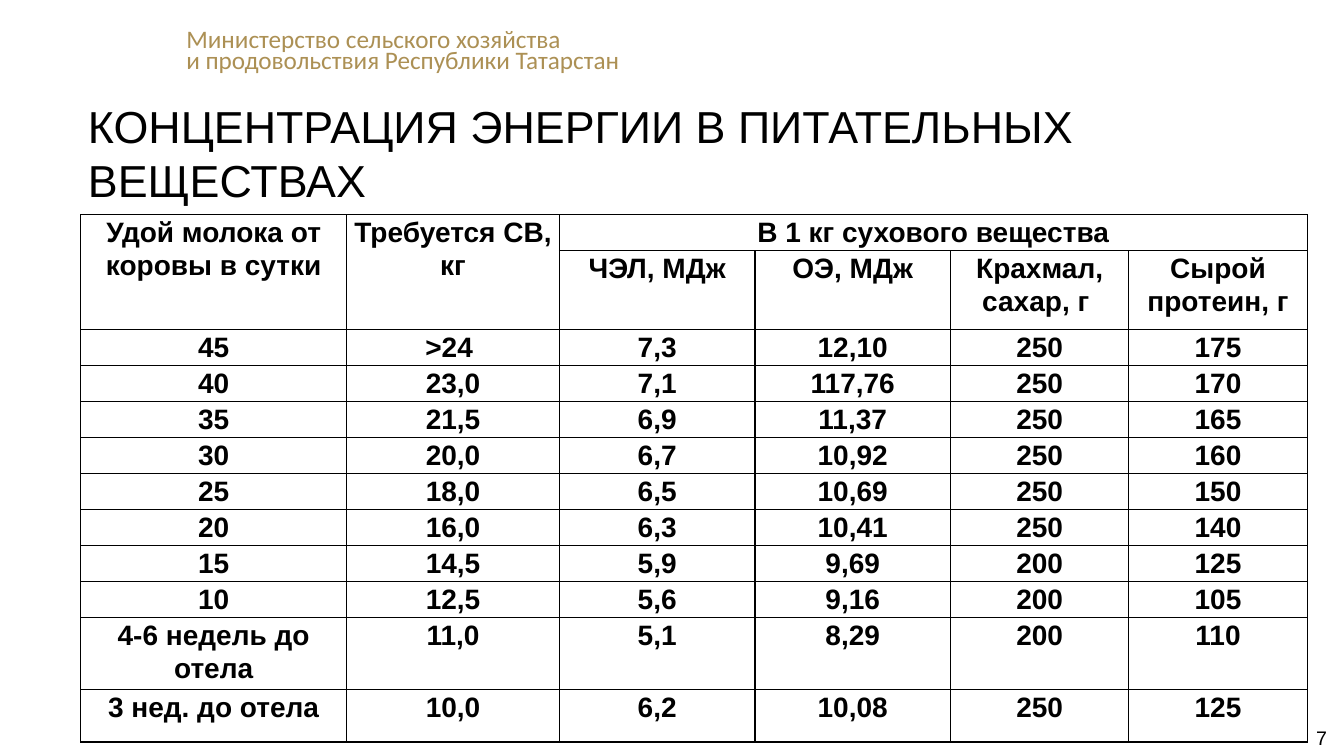
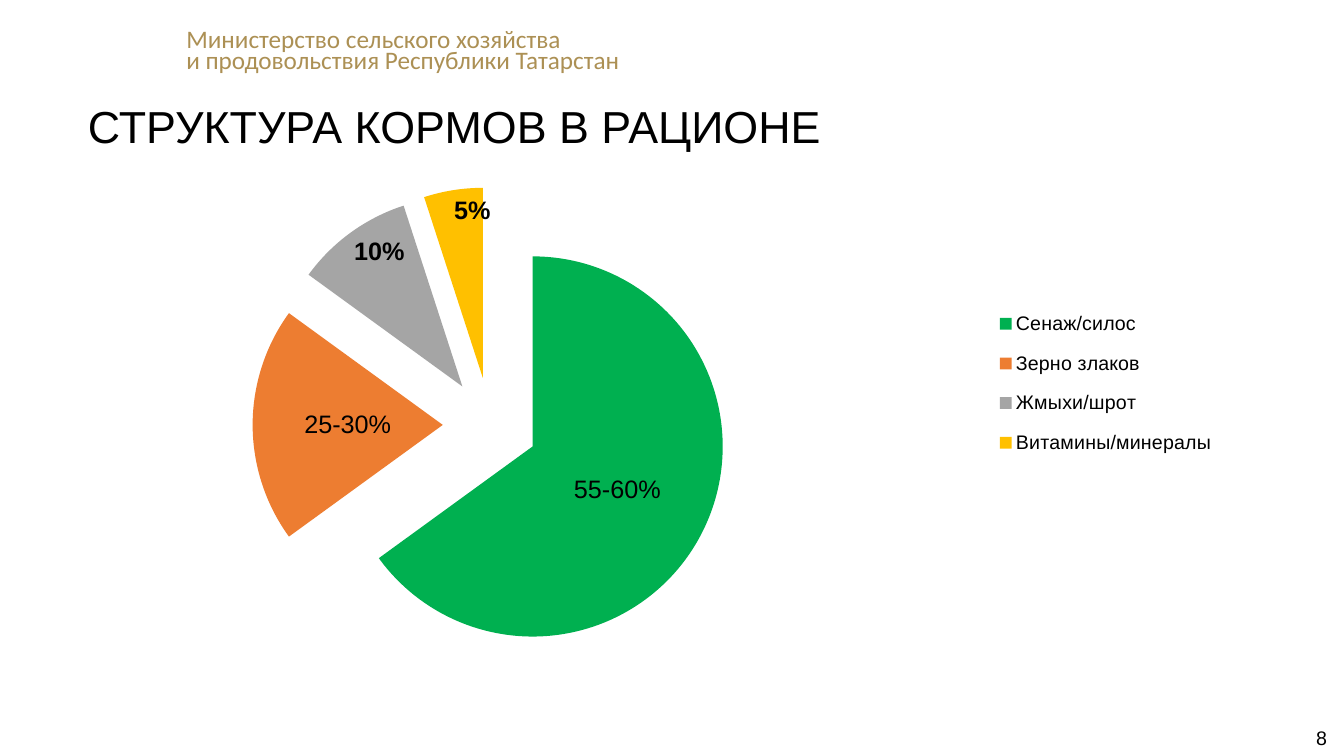
"""Build two slides on cow feed: an energy concentration table and a ration pie chart."""
from dataclasses import dataclass

from pptx import Presentation
from pptx.chart.data import CategoryChartData
from pptx.dml.color import RGBColor
from pptx.enum.chart import XL_CHART_TYPE, XL_LABEL_POSITION, XL_LEGEND_POSITION
from pptx.enum.text import MSO_ANCHOR, MSO_AUTO_SIZE, PP_ALIGN
from pptx.oxml import parse_xml
from pptx.oxml.ns import nsdecls
from pptx.util import Pt

PIE = XL_CHART_TYPE.PIE
INSIDE_END, CENTER_LABEL = XL_LABEL_POSITION.INSIDE_END, XL_LABEL_POSITION.CENTER
LEGEND_RIGHT = XL_LEGEND_POSITION.RIGHT
TOP = MSO_ANCHOR.TOP
GROW, FIXED = MSO_AUTO_SIZE.SHAPE_TO_FIT_TEXT, MSO_AUTO_SIZE.NONE
LEFT, CENTER = PP_ALIGN.LEFT, PP_ALIGN.CENTER


@dataclass(frozen=True)
class Theme:
    """Colours, fonts and type sizes of the deck."""
    ink: str = "000000"
    gold: str = "AC9054"
    slices: tuple = ("00B050", "ED7D31", "A5A5A5", "FFC000")
    text_font: str = "Arial"
    header_font: str = "Calibri"
    title_size: int = 32
    header_size: int = 18
    table_size: int = 20
    label_size: int = 18
    small_size: int = 14


THEME = Theme()
HEADER = ("Министерство сельского хозяйства", "и продовольствия Республики Татарстан")
COLUMN_WIDTHS = (190.1, 151.9, 139.7, 139.7, 127.4, 127.4)
ROW_HEIGHTS = (25.7, 56.4, *[25.7] * 8, 51.4, 37.4)
MERGES = ((0, 0, 1, 0), (0, 1, 1, 1), (0, 2, 0, 5))
FEED_ROWS = (
    ("Удой молока от коровы в сутки", "Требуется СВ, кг", "В 1 кг сухового вещества", "", "", ""),
    ("", "", "ЧЭЛ, МДж", "ОЭ, МДж", "Крахмал, сахар, г ", "Сырой протеин, г"),
    ("45", ">24 ", "7,3", "12,10", "250", "175"),
    ("40", "23,0", "7,1", "117,76", "250", "170"),
    ("35", "21,5", "6,9", "11,37", "250", "165"),
    ("30", "20,0", "6,7", "10,92", "250", "160"),
    ("25", "18,0", "6,5", "10,69", "250", "150"),
    ("20", "16,0", "6,3", "10,41", "250", "140"),
    ("15", "14,5", "5,9", "9,69", "200", "125"),
    ("10", "12,5", "5,6", "9,16", "200", "105"),
    ("4-6 недель до отела", "11,0", "5,1", "8,29", "200", "110"),
    ("3 нед. до отела", "10,0", "6,2", "10,08", "250", "125"),
)
RATION = {"Сенаж/силос": 65, "Зерно злаков": 20, "Жмыхи/шрот": 10, "Витамины/минералы": 5}
RANGE_LABELS = ("55-60%", "25-30%")


def apply(target, formats):
    """Set each attribute named in formats on target."""
    for name, value in formats.items():
        setattr(target, name, value)


def style_font(font, size, color=THEME.ink, name=THEME.text_font, bold=False):
    """Format a font."""
    apply(font, {"size": Pt(size), "name": name, "bold": bold})
    font.color.rgb = RGBColor.from_string(color)


def place(shape, left, top, width, height):
    """Position a shape, in points."""
    apply(shape, {"left": Pt(left), "top": Pt(top), "width": Pt(width), "height": Pt(height)})


def add_header(page, layout):
    """Put the ministry name on the layout, where every page shows it."""
    for holder in list(layout.placeholders)[1:]:
        holder.element.getparent().remove(holder.element)
    box = page.shapes.add_textbox(Pt(126), Pt(18.7), Pt(327.6), Pt(38.9))
    frame = box.text_frame
    apply(frame, {"word_wrap": False, "auto_size": GROW, "text": "\n".join(HEADER)})
    for para in frame.paragraphs:
        para.line_spacing = 0.7
        style_font(para.runs[0].font, THEME.header_size, THEME.gold, THEME.header_font)
    layout.shapes.element.append(box.element)


def add_title(page, text, height):
    """Fill and format the title placeholder."""
    title = page.shapes.title
    place(title, 41.8, 67, 918, height)
    frame = title.text_frame
    apply(frame, {"text": text, "word_wrap": True, "auto_size": GROW,
                  "vertical_anchor": TOP, "margin_left": Pt(21)})
    para = frame.paragraphs[0]
    para.alignment = LEFT
    style_font(para.runs[0].font, THEME.title_size)


def add_page_number(page, number):
    """Write the page number in the bottom right corner."""
    box = page.shapes.add_textbox(Pt(934.6), Pt(518.4), Pt(18.7), Pt(16.6))
    frame = box.text_frame
    apply(frame, {"text": str(number), "word_wrap": False, "auto_size": FIXED,
                  "margin_left": 0, "margin_right": 0, "margin_top": 0, "margin_bottom": 0})
    para = frame.paragraphs[0]
    para.alignment = CENTER
    style_font(para.runs[0].font, THEME.small_size)


def add_borders(cell):
    """Draw a thin line on all four sides of a cell."""
    properties = cell._tc.get_or_add_tcPr()
    for side in "LRTB":
        properties.append(parse_xml(
            f'<a:ln{side} {nsdecls("a")} w="{Pt(1)}"><a:solidFill>'
            f'<a:srgbClr val="{THEME.ink}"/></a:solidFill></a:ln{side}>'))


def fill_cell(cell, text):
    """Write and format one table cell."""
    add_borders(cell)
    cell.fill.background()
    apply(cell, {"text": text, "vertical_anchor": TOP, "margin_left": Pt(5.4),
                 "margin_right": Pt(5.4), "margin_top": 0, "margin_bottom": 0})
    para = cell.text_frame.paragraphs[0]
    apply(para, {"alignment": CENTER, "line_spacing": 1.07})
    style_font(para.font, THEME.table_size, bold=True)
    for span in para.runs:
        style_font(span.font, THEME.table_size, bold=True)


def add_feed_table(page):
    """Add the table of energy and nutrients by milk yield."""
    table = page.shapes.add_table(
        len(ROW_HEIGHTS), len(COLUMN_WIDTHS), Pt(57.6), Pt(153.4),
        Pt(sum(COLUMN_WIDTHS)), Pt(sum(ROW_HEIGHTS))).table
    apply(table, {"first_row": False, "horz_banding": False})
    for column, width in zip(table.columns, COLUMN_WIDTHS):
        column.width = Pt(width)
    for row, height, texts in zip(table.rows, ROW_HEIGHTS, FEED_ROWS):
        row.height = Pt(height)
        for cell, text in zip(row.cells, texts):
            fill_cell(cell, text)
    for top, left, bottom, right in MERGES:
        table.cell(top, left).merge(table.cell(bottom, right))


def set_layout(parent, index, bounds, target=""):
    """Give a chart part a fixed place, in fractions of the chart."""
    for old in parent.xpath("c:layout"):
        parent.remove(old)
    modes = "".join(f'<c:{axis}Mode val="edge"/>' for axis in "xy")
    sizes = "".join(f'<c:{name} val="{value}"/>' for name, value in zip("xywh", bounds))
    parent.insert(index, parse_xml(
        f'<c:layout {nsdecls("c")}><c:manualLayout>{target}{modes}{sizes}'
        '</c:manualLayout></c:layout>'))


def style_slices(series):
    """Colour the slices and label them."""
    labels = series.data_labels
    apply(labels, {"show_percentage": True, "show_value": False, "position": INSIDE_END})
    style_font(labels.font, THEME.label_size, bold=True)
    for index, color in enumerate(THEME.slices):
        fill = series.points[index].format.fill
        fill.solid()
        fill.fore_color.rgb = RGBColor.from_string(color)
    for index, text in enumerate(RANGE_LABELS):
        label = series.points[index].data_label
        label.text_frame.text = text
        style_font(label.text_frame.paragraphs[0].runs[0].font, THEME.label_size)
        label.position = CENTER_LABEL


def add_ration_chart(page):
    """Add the exploded pie chart of the ration."""
    data = CategoryChartData()
    data.categories = list(RATION)
    data.add_series("Series 1", list(RATION.values()))
    chart = page.shapes.add_chart(PIE, Pt(71.3), Pt(130.3), Pt(845.3), Pt(350), data).chart
    apply(chart, {"has_title": False, "has_legend": True})
    style_font(chart.font, THEME.small_size)
    apply(chart.legend, {"position": LEGEND_RIGHT, "include_in_layout": False})
    style_font(chart.legend.font, THEME.small_size)
    chart.plots[0].vary_by_categories = True
    style_slices(chart.plots[0].series[0])
    root = chart.element
    root.xpath("//c:ser/c:dPt")[0].addprevious(
        parse_xml(f'<c:explosion {nsdecls("c")} val="25"/>'))
    set_layout(root.xpath("//c:plotArea")[0], 0, (0.12, 0.01, 0.42, 0.97),
               '<c:layoutTarget val="inner"/>')
    set_layout(root.xpath("//c:legend")[0], 1, (0.75, 0.23, 0.2, 0.36))


def main():
    """Build and save the deck."""
    deck = Presentation()
    apply(deck, {"slide_width": Pt(960), "slide_height": Pt(540)})
    layout = deck.slide_layouts[5]
    contents = (("КОНЦЕНТРАЦИЯ ЭНЕРГИИ В ПИТАТЕЛЬНЫХ ВЕЩЕСТВАХ", 85, add_feed_table),
                ("СТРУКТУРА КОРМОВ В РАЦИОНЕ", 46, add_ration_chart))
    for number, (title, height, add_content) in enumerate(contents, 7):
        page = deck.slides.add_slide(layout)
        if number == 7:
            add_header(page, layout)
        add_title(page, title, height)
        add_content(page)
        add_page_number(page, number)
    deck.save("out.pptx")


if __name__ == "__main__":
    main()
